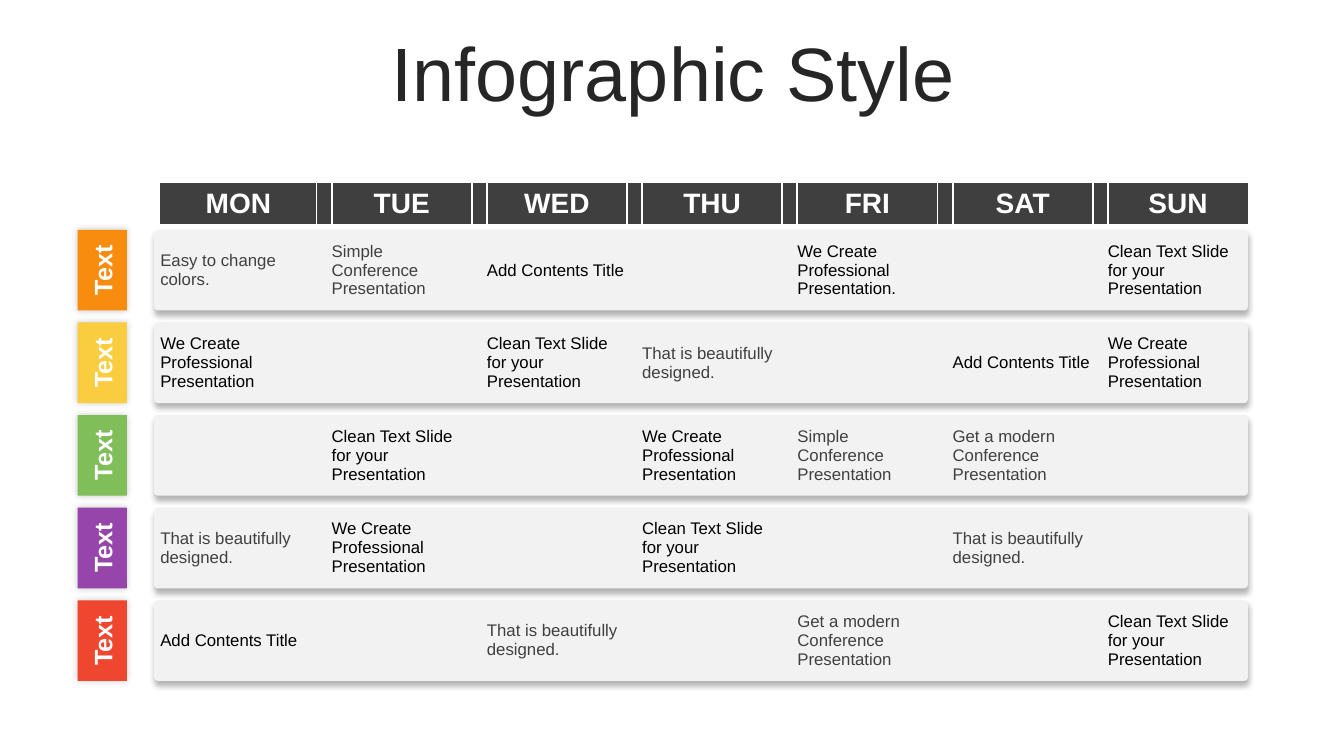
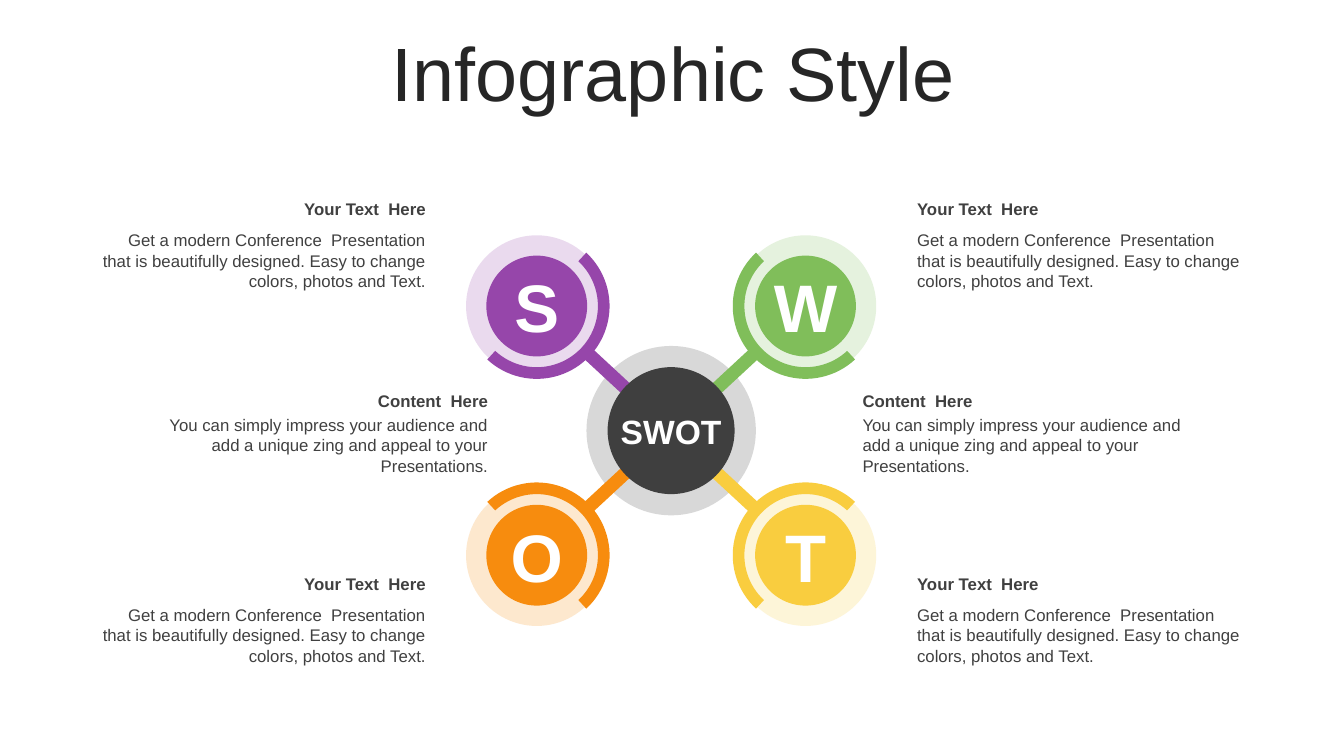
from math import atan2, degrees, hypot

from lxml.etree import SubElement
from pptx import Presentation
from pptx.dml.color import RGBColor
from pptx.enum.shapes import MSO_SHAPE
from pptx.enum.text import MSO_ANCHOR, MSO_AUTO_SIZE, PP_ALIGN
from pptx.oxml.ns import qn
from pptx.util import Pt

# Shared style
FONT = "Arial"
WHITE, BLACK, INK, GRAY = "FFFFFF", "000000", "262626", "404040"
DARK, PALE = "3F3F3F", "F2F2F2"
ORANGE, YELLOW, GREEN, PURPLE, RED = "F78C0E", "F9CD3F", "80BE5A", "9646AA", "EF4630"
NO_GRID_STYLE = "{2D5ABB26-0587-4C30-8999-92F81FD0307C}"


def color(hex_code):
    return RGBColor.from_string(hex_code)


def add_color(parent, hex_code, alpha=None):
    """Add a solid colour element, with opacity in percent."""
    node = SubElement(parent, qn("a:srgbClr"), val=hex_code)
    if alpha is not None:
        SubElement(node, qn("a:alpha"), val=str(alpha * 1000))


class Deck:
    """Holds the presentation, its style and the current slide."""

    def __init__(self):
        self.prs = Presentation()
        self.prs.slide_width, self.prs.slide_height = Pt(960), Pt(540)
        self.slide = None

    def new_slide(self, heading):
        self.slide = self.prs.slides.add_slide(self.prs.slide_layouts[5])
        title = self.slide.shapes.title
        title.left, title.top, title.width, title.height = Pt(25), Pt(26.6), Pt(912), Pt(57)
        frame = title.text_frame
        frame.text = heading
        frame.auto_size = MSO_AUTO_SIZE.NONE
        frame.vertical_anchor = MSO_ANCHOR.MIDDLE
        frame.paragraphs[0].line_spacing = 0.9
        self.format(frame.paragraphs[0], 54, INK, align=PP_ALIGN.CENTER)

    def format(self, paragraph, size, hex_code, bold=False, align=PP_ALIGN.LEFT):
        paragraph.alignment = align
        for run in paragraph.runs:
            run.font.name, run.font.size, run.font.bold = FONT, Pt(size), bold
            run.font.color.rgb = color(hex_code)

    def shape(self, kind, left, top, width, height, fill, alpha=None, shadow=None):
        """Add a flat shape; shadow is (opacity, blur, distance, degrees)."""
        shape = self.slide.shapes.add_shape(kind, Pt(left), Pt(top), Pt(width), Pt(height))
        shape.fill.solid()
        shape.fill.fore_color.rgb = color(fill)
        shape.line.fill.background()
        shape.shadow.inherit = False
        properties = shape._element.spPr
        if alpha is not None:
            solid = properties.find(qn("a:solidFill"))
            solid.clear()
            add_color(solid, fill, alpha)
        if shadow:
            opacity, blur, distance, angle = shadow
            outer = SubElement(properties.find(qn("a:effectLst")), qn("a:outerShdw"),
                               blurRad=str(Pt(blur)), dist=str(Pt(distance)),
                               dir=str(angle * 60000), rotWithShape="0")
            add_color(outer, BLACK, opacity)
        return shape

    def centered(self, kind, x, y, width, height, fill, alpha=None):
        return self.shape(kind, x - width / 2, y - height / 2, width, height, fill, alpha)

    def label(self, shape, text, size, vertical=False):
        """Write one bold white line in the middle of a shape."""
        frame = shape.text_frame
        frame.text = text
        frame.word_wrap = False
        frame.vertical_anchor = MSO_ANCHOR.MIDDLE
        frame.margin_left = frame.margin_right = frame.margin_top = frame.margin_bottom = 0
        if vertical:
            frame._txBody.bodyPr.set("vert", "vert270")
        self.format(frame.paragraphs[0], size, WHITE, True, PP_ALIGN.CENTER)

    def note(self, left, top, width, heading, body, gap, align):
        """Add a bold heading with a body text below it."""
        box = self.slide.shapes.add_textbox(Pt(left), Pt(top), Pt(width), Pt(73))
        frame = box.text_frame
        frame.word_wrap = True
        frame.text = f"{heading}\n{body}"
        first, second = frame.paragraphs
        first.space_after = Pt(gap)
        self.format(first, 12, GRAY, True, align)
        self.format(second, 12, GRAY, align=align)

    def table(self, left, top, widths, heights):
        """Add a table without grid, fill or margins."""
        frame = self.slide.shapes.add_table(len(heights), len(widths), Pt(left), Pt(top),
                                            Pt(sum(widths)), Pt(sum(heights)))
        table = frame.table
        table.first_row = table.horz_banding = False
        table._tbl.tblPr.find(qn("a:tableStyleId")).text = NO_GRID_STYLE
        for column, width in zip(table.columns, widths):
            column.width = Pt(width)
        for row, height in zip(table.rows, heights):
            row.height = Pt(height)
        for cell in table.iter_cells():
            cell.fill.background()
            cell.vertical_anchor = MSO_ANCHOR.MIDDLE
            cell.margin_left = cell.margin_right = cell.margin_top = cell.margin_bottom = 0
            # Small end mark, so that narrow rows keep their height
            cell.text_frame.paragraphs[0]._p.get_or_add_endParaRPr().set("sz", "100")
        return table

    def cell(self, cell, text, size, hex_code, bold=False, align=PP_ALIGN.LEFT):
        cell.text = text
        for paragraph in cell.text_frame.paragraphs:
            self.format(paragraph, size, hex_code, bold, align)

    def border(self, cell, side):
        properties = cell._tc.get_or_add_tcPr()
        line = SubElement(properties, qn(f"a:{side}"), w=str(Pt(1.5)))
        add_color(SubElement(line, qn("a:solidFill")), WHITE)
        properties.insert(0, line)


def build_schedule(deck):
    days = ["MON", "TUE", "WED", "THU", "FRI", "SAT", "SUN"]
    easy = "Easy to change colors."
    simple = "Simple Conference Presentation"
    designed = "That is beautifully designed."
    modern = "Get a modern Conference  Presentation"
    add = "Add Contents Title"
    create = "We Create\nProfessional Presentation"
    clean = "Clean Text Slide for your Presentation"
    muted = (easy, simple, designed, modern)
    plan = [
        (ORANGE, [easy, simple, add, "", create + ".", "", clean]),
        (YELLOW, [create, "", clean, designed, "", add, create]),
        (GREEN, ["", clean, "", create, simple, modern, ""]),
        (PURPLE, [designed, create, "", clean, "", designed, ""]),
        (RED, [add, "", designed, "", modern, "", clean]),
    ]
    deck.new_slide("Infographic Style")

    # Bars and side tabs
    table_top, header, header_gap, bar, bar_gap = 131, 28.8, 4.4, 57.6, 8.55
    for index, (accent, _) in enumerate(plan):
        top = table_top + header + header_gap + index * (bar + bar_gap)
        strip = deck.shape(MSO_SHAPE.ROUNDED_RECTANGLE, 110, top, 781.4, bar, PALE,
                           shadow=(30, 4, 3, 90))
        strip.adjustments[0] = 0.05
        tab = deck.shape(MSO_SHAPE.RECTANGLE, 55.4, top, 35.3, bar, accent,
                         shadow=(22, 5, 0, 0))
        deck.label(tab, "Text", 18, vertical=True)

    # Day columns alternate with narrow gap columns
    widths = [111.6] + [10.8, 100.1] * (len(days) - 1)
    heights = [header, header_gap, bar] + [bar_gap, bar] * (len(plan) - 1)
    table = deck.table(114.5, table_top, widths, heights)
    for column in range(len(widths)):
        head = table.cell(0, column)
        head.fill.solid()
        head.fill.fore_color.rgb = color(DARK)
        if column % 2:
            deck.border(head, "lnL")
        else:
            deck.cell(head, days[column // 2], 20, WHITE, True, PP_ALIGN.CENTER)
            if column < len(widths) - 1:
                deck.border(head, "lnR")
    for index, (_, entries) in enumerate(plan):
        for day, entry in enumerate(entries):
            if entry:
                deck.cell(table.cell(2 + 2 * index, 2 * day), entry, 12,
                          GRAY if entry in muted else BLACK)


def build_swot(deck):
    hub_x, hub_y, reach_x, reach_y = 479.4, 307.6, 96, 89
    quarters = [("S", PURPLE, -1, -1), ("W", GREEN, 1, -1),
                ("O", ORANGE, -1, 1), ("T", YELLOW, 1, 1)]
    deck.new_slide("Infographic Style")

    # Hub halo, then arm, halo, arc and disc of each quarter
    deck.centered(MSO_SHAPE.OVAL, hub_x, hub_y, 121, 121, DARK, alpha=20)
    for letter, accent, side, level in quarters:
        dx, dy = side * reach_x, level * reach_y
        x, y = hub_x + dx, hub_y + dy
        to_hub = degrees(atan2(-dy, -dx))
        deck.centered(MSO_SHAPE.OVAL, x, y, 101, 101, accent, alpha=20)
        arm = deck.centered(MSO_SHAPE.RECTANGLE, hub_x + dx / 2, hub_y + dy / 2,
                            hypot(dx, dy) - 90, 9.4, accent)
        arm.rotation = to_hub
        arc = deck.centered(MSO_SHAPE.BLOCK_ARC, x, y, 104, 104, accent)
        arc.adjustments[2] = 0.08
        arc.rotation = to_hub + 90
        disc = deck.centered(MSO_SHAPE.OVAL, x, y, 72, 72, accent)
        deck.label(disc, letter, 48)
    hub = deck.centered(MSO_SHAPE.OVAL, hub_x, hub_y, 90.7, 90.7, DARK)
    deck.label(hub, "SWOT", 24)

    # Notes on both sides
    modern = ("Get a modern Conference  Presentation that is beautifully designed. "
              "Easy to change colors, photos and Text.")
    impress = ("You can simply impress your audience and add a unique zing "
               "and appeal to your Presentations.")
    for align, outer_left, inner_left in [(PP_ALIGN.RIGHT, 65.3, 101.7),
                                          (PP_ALIGN.LEFT, 648, 609)]:
        for top in (138.2, 406):
            deck.note(outer_left, top, 246, "Your Text  Here", modern, 8.2, align)
        deck.note(inner_left, 275.8, 254, "Content  Here", impress, 2.6, align)


def main():
    deck = Deck()
    build_schedule(deck)
    build_swot(deck)
    deck.prs.save("out.pptx")


if __name__ == "__main__":
    main()
